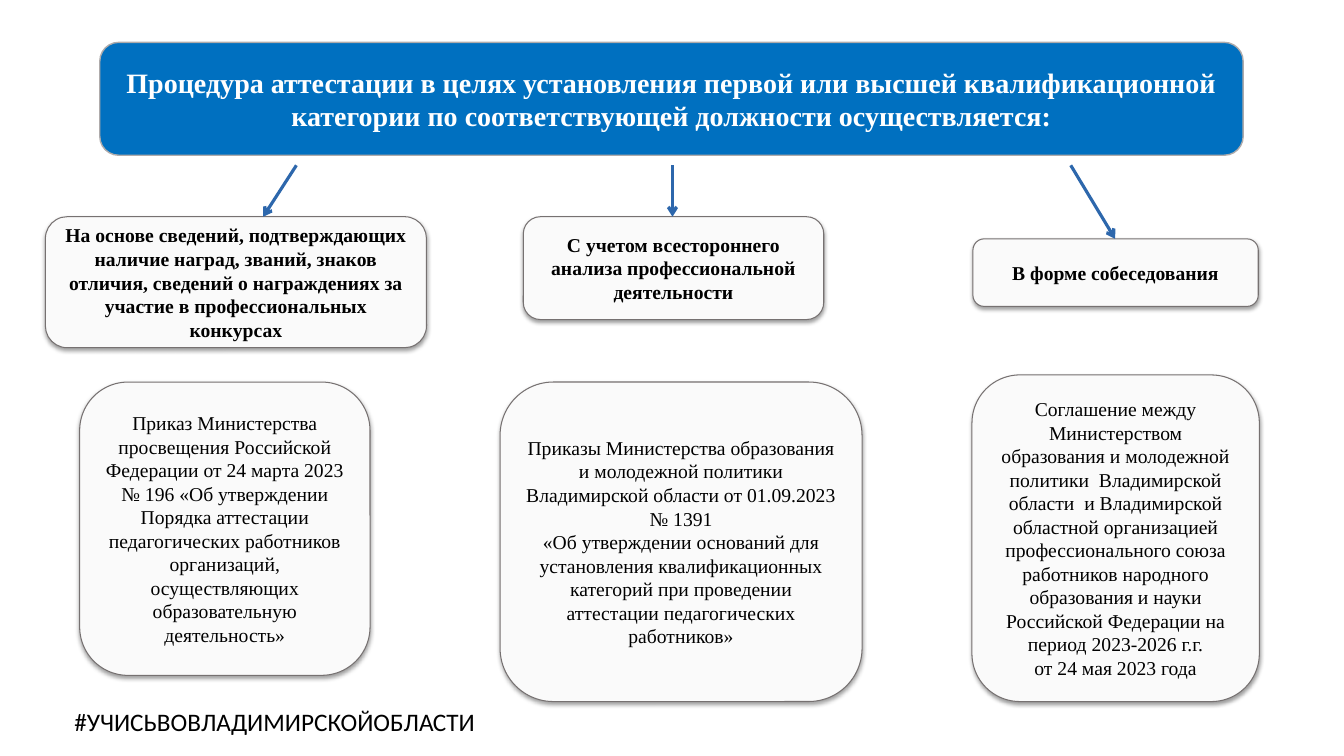
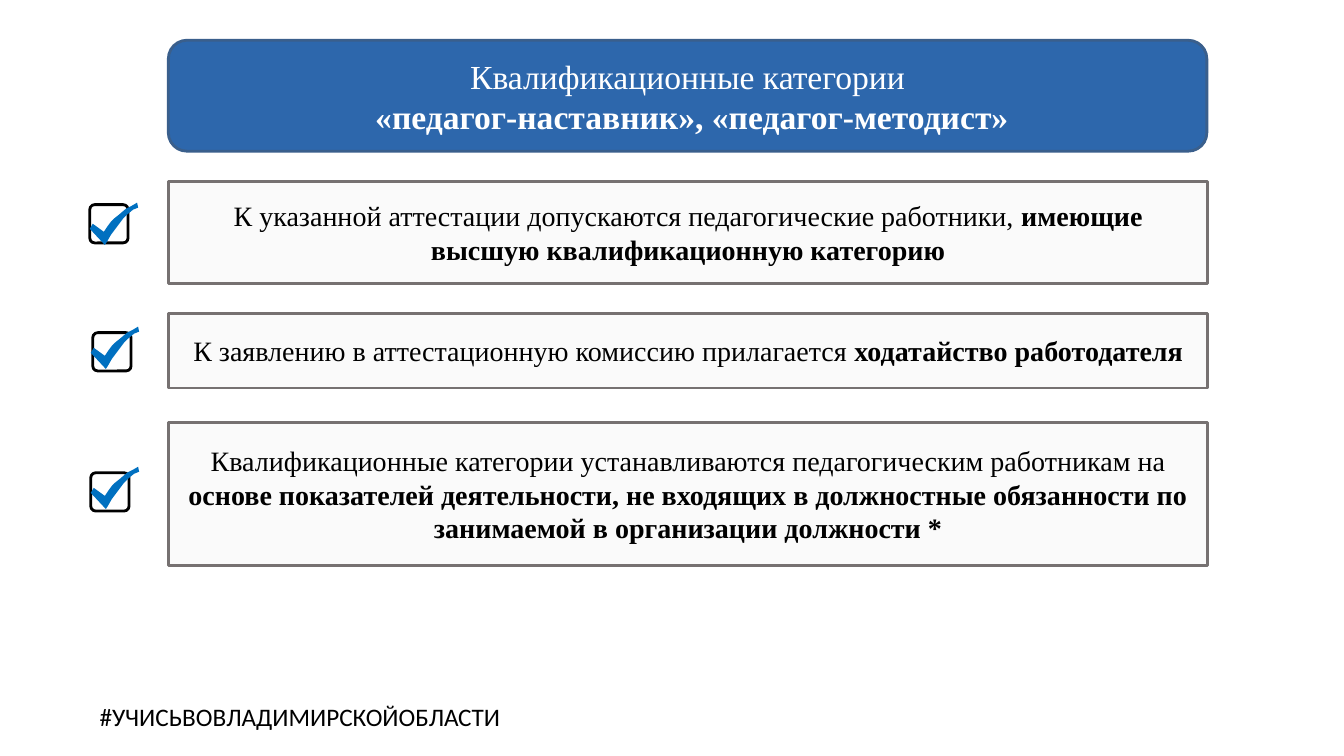
import dataclasses
import lxml.etree
import pptx
import pptx.dml.color
import pptx.enum.shapes
import pptx.enum.text
import pptx.oxml.ns
import pptx.util

SHAPE = pptx.enum.shapes.MSO_SHAPE
ALIGN = pptx.enum.text.PP_ALIGN
ANCHOR = pptx.enum.text.MSO_ANCHOR
PX = 9144
TICK = [(47, 0), (42, 3), (36, 6), (29, 12), (24, 16), (21, 19), (18, 23), (14, 29), (3, 21),
        (0, 26), (15, 42), (17, 39), (21, 32), (27, 24), (33, 16), (37, 12), (43, 7), (48, 5)]


@dataclasses.dataclass(frozen=True)
class Theme:
    serif: str = "Times New Roman"
    sans: str = "Calibri"
    black: str = "000000"
    white: str = "FFFFFF"
    bright: str = "0070C0"
    blue: str = "2D67AC"
    navy: str = "3A5F8C"
    silver: str = "AFABAB"
    gray: str = "767171"
    paper: str = "FAFAFA"
    title: int = 24
    lead: int = 20
    tag: int = 18
    body: int = 14


class Deck:
    """Draws styled elements on the current slide, with lengths in px of 1/100 inch."""

    def __init__(self, theme):
        self.t = theme
        self.prs = pptx.Presentation()
        self.prs.slide_width, self.prs.slide_height = 1333 * PX, 750 * PX
        self.s = None

    def slide(self):
        self.s = self.prs.slides.add_slide(self.prs.slide_layouts[6])

    def color(self, value):
        return pptx.dml.color.RGBColor.from_string(value)

    def paint(self, sp, fill=None, line=None, width=1):
        sp.shadow.inherit = False
        if fill:
            sp.fill.solid()
            sp.fill.fore_color.rgb = self.color(fill)
        else:
            sp.fill.background()
        if line:
            sp.line.color.rgb = self.color(line)
            sp.line.width = pptx.util.Pt(width)
        else:
            sp.line.fill.background()

    def shape(self, kind, box, fill, line, width):
        sp = self.s.shapes.add_shape(kind, *(v * PX for v in box))
        self.paint(sp, fill, line, width)
        return sp

    def text(self, sp, text, size, color, bold=False, align=ALIGN.CENTER, font=None):
        tf = sp.text_frame
        tf.word_wrap = True
        tf.vertical_anchor = ANCHOR.MIDDLE
        for i, line in enumerate(text.split("\n")):
            p = tf.add_paragraph() if i else tf.paragraphs[0]
            p.alignment = align
            p.font.name = font or self.t.serif
            p.font.size = pptx.util.Pt(size)
            p.font.color.rgb = self.color(color)
            p.font.bold = bold
            for j, part in enumerate(line.split("**")):
                if part:
                    r = p.add_run()
                    r.text = part
                    if j % 2:
                        r.font.bold = True

    def banner(self, box, text, size, fill, line, width, bold=False):
        sp = self.shape(SHAPE.ROUNDED_RECTANGLE, box, fill, line, width)
        self.text(sp, text, size, self.t.white, bold)

    def card(self, box, text, bold=False):
        sp = self.shape(SHAPE.ROUNDED_RECTANGLE, box, self.t.paper, self.t.gray, 0.75)
        self.text(sp, text, self.t.body, self.t.black, bold)
        qn = pptx.oxml.ns.qn
        effects = sp._element.spPr.find(qn("a:effectLst"))
        shadow = lxml.etree.SubElement(effects, qn("a:outerShdw"), blurRad="39370", dist="20320",
                                       dir="5400000", rotWithShape="0")
        color = lxml.etree.SubElement(shadow, qn("a:srgbClr"), val=self.t.black)
        lxml.etree.SubElement(color, qn("a:alpha"), val="38000")

    def row(self, box, text):
        sp = self.shape(SHAPE.RECTANGLE, box, self.t.paper, self.t.gray, 2)
        self.text(sp, text, self.t.lead, self.t.black)

    def arrow(self, x1, y1, x2, y2):
        kind = pptx.enum.shapes.MSO_CONNECTOR.STRAIGHT
        sp = self.s.shapes.add_connector(kind, *(v * PX for v in (x1, y1, x2, y2)))
        sp.line.color.rgb = self.color(self.t.blue)
        sp.line.width = pptx.util.Pt(2.25)
        qn = pptx.oxml.ns.qn
        spPr = sp._element.spPr
        lxml.etree.SubElement(spPr.find(qn("a:ln")), qn("a:tailEnd"), type="arrow")
        lxml.etree.SubElement(spPr, qn("a:effectLst"))

    def check(self, box_x, box_y, tick_x, tick_y):
        sp = self.shape(SHAPE.ROUNDED_RECTANGLE, (box_x, box_y, 38, 38), None, self.t.black, 2)
        sp.adjustments[0] = 0.13
        points = [(tick_x + x, tick_y + y) for x, y in TICK]
        fb = self.s.shapes.build_freeform(*points[0], scale=PX)
        fb.add_line_segments(points[1:], close=True)
        self.paint(fb.convert_to_shape(), self.t.bright)

    def hashtag(self, x, y):
        sp = self.s.shapes.add_textbox(x * PX, y * PX, 477 * PX, 39 * PX)
        self.text(sp, "#УЧИСЬВОВЛАДИМИРСКОЙОБЛАСТИ", self.t.tag, self.t.black,
                  align=ALIGN.LEFT, font=self.t.sans)


def procedure(d):
    d.slide()
    d.banner((99, 42, 1134, 112),
             "Процедура аттестации в целях установления первой или высшей квалификационной "
             "категории по соответствующей должности осуществляется:",
             d.t.lead, d.t.bright, d.t.silver, 1, bold=True)
    columns = [
        ((45, 215, 378, 130),
         "На основе сведений, подтверждающих наличие наград, званий, знаков отличия, "
         "сведений о награждениях за участие в профессиональных конкурсах",
         (79, 379, 288, 291),
         "Приказ Министерства просвещения Российской Федерации от 24 марта 2023 № 196 "
         "«Об утверждении Порядка аттестации педагогических работников организаций, "
         "осуществляющих образовательную деятельность»",
         (294, 164, 261, 215)),
        ((519, 215, 298, 102),
         "С учетом всестороннего анализа профессиональной деятельности",
         (496, 379, 359, 317),
         "Приказы Министерства образования и молодежной политики Владимирской области "
         "от 01.09.2023 № 1391\n«Об утверждении оснований для установления "
         "квалификационных категорий при проведении аттестации педагогических работников»",
         (667, 164, 667, 215)),
        ((965, 237, 283, 67),
         "В форме собеседования",
         (964, 372, 285, 324),
         "Соглашение между Министерством образования и молодежной политики  Владимирской "
         "области  и Владимирской областной организацией профессионального союза работников "
         "народного образования и науки Российской Федерации на период 2023-2026 г.г.\n"
         "от 24 мая 2023 года",
         (1062, 164, 1106, 237)),
    ]
    for basis_box, basis, act_box, act, arrow in columns:
        d.card(basis_box, basis, bold=True)
        d.card(act_box, act)
        d.arrow(*arrow)
    d.hashtag(64, 696)


def categories(d):
    d.slide()
    d.banner((167, 40, 1030, 110),
             "Квалификационные категории\n **«педагог-наставник», «педагог-методист»**",
             d.t.title, d.t.blue, d.t.navy, 2)
    rows = [
        (180, 101, "К указанной аттестации допускаются педагогические работники, "
         "**имеющие высшую квалификационную категорию**", (89, 203, 89, 201)),
        (311, 74, "К заявлению в аттестационную комиссию прилагается "
         "**ходатайство работодателя**", (92, 330, 90, 324)),
        (419, 142, "Квалификационные категории устанавливаются педагогическим работникам на "
         "**основе показателей деятельности, не входящих в должностные обязанности по "
         "занимаемой в организации должности *", (90, 469, 90, 463)),
    ]
    for top, height, text, check in rows:
        d.row((167, top, 1031, height), text)
        d.check(*check)
    d.hashtag(89, 691)


def main():
    d = Deck(Theme())
    procedure(d)
    categories(d)
    d.prs.save("out.pptx")


if __name__ == "__main__":
    main()
